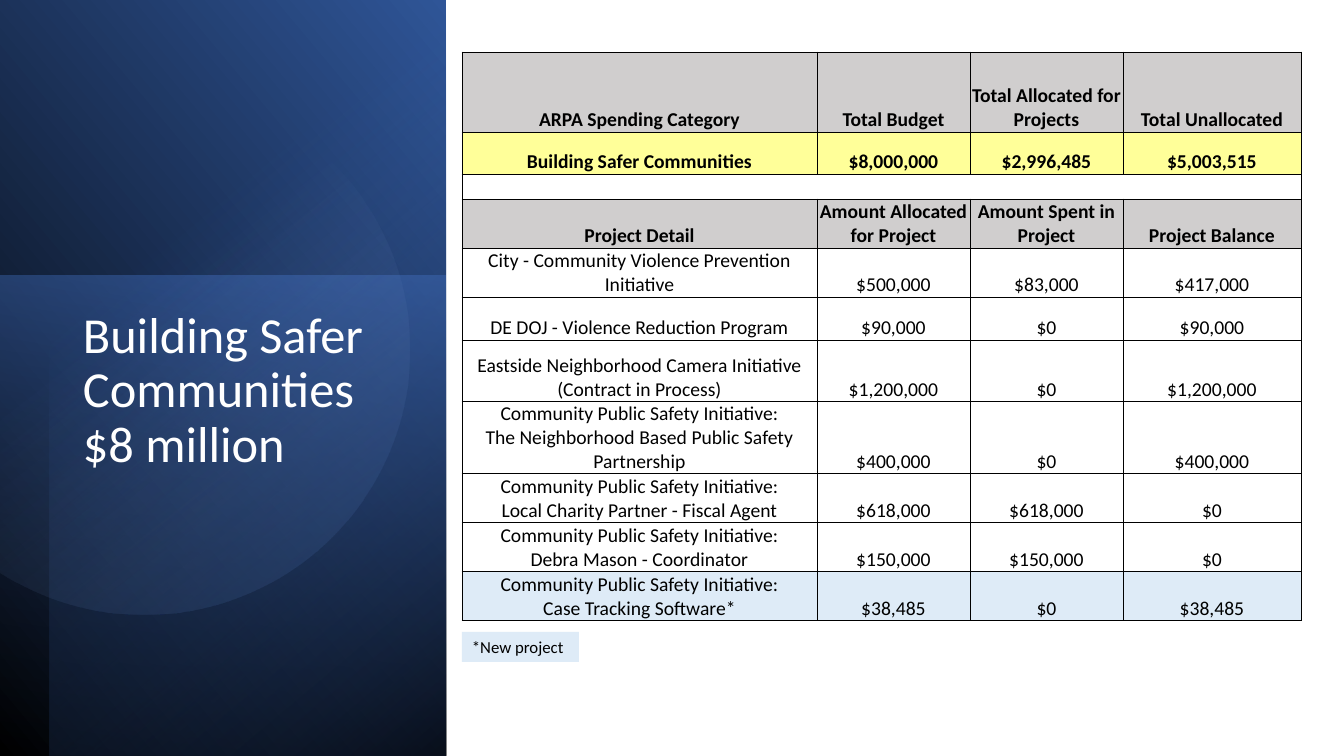
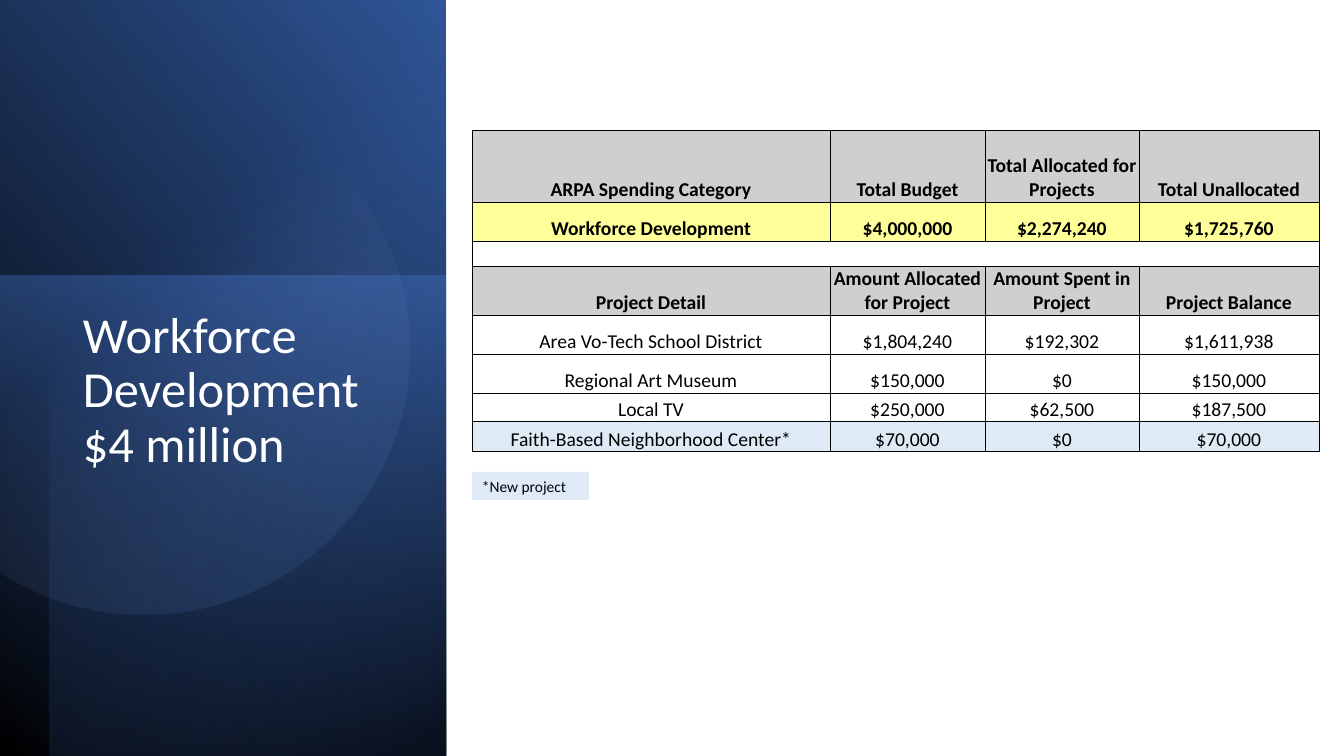
from dataclasses import dataclass
from math import acos, cos, sin

from lxml.etree import SubElement
from pptx import Presentation
from pptx.dml.color import RGBColor
from pptx.enum.shapes import MSO_SHAPE as Preset
from pptx.enum.text import MSO_ANCHOR as Anchor, PP_ALIGN as Align
from pptx.oxml import parse_xml
from pptx.oxml.ns import nsdecls, qn
from pptx.util import Emu, Pt

SLIDE_WIDTH, SLIDE_HEIGHT = 1344, 756
EMU_PER_PX = 12192000 / SLIDE_WIDTH


@dataclass(frozen=True)
class Theme:
    font: str = "Calibri"
    text: str = "000000"
    title: str = "FFFFFF"
    blank: str = "FFFFFF"
    header: str = "D0CECE"
    total: str = "FFFF99"
    new: str = "DEEBF7"
    black: str = "000000"
    blue: str = "4472C4"
    light_blue: str = "8FAADC"
    deep_blue: str = "2F5597"
    navy: str = "203864"
    title_size: int = 36
    table_size: int = 14
    border: float = 0.5


def px(length):
    return Emu(round(length * EMU_PER_PX))


class Deck:
    def __init__(self, theme):
        self.theme = theme
        self.presentation = Presentation()
        self.presentation.slide_width = px(SLIDE_WIDTH)
        self.presentation.slide_height = px(SLIDE_HEIGHT)
        self.slide = None

    def new_slide(self):
        self.slide = self.presentation.slides.add_slide(self.presentation.slide_layouts[6])

    def style_paragraph(self, paragraph, size, color, bold=False, align=Align.LEFT):
        paragraph.alignment = align
        for run in paragraph.runs:
            run.font.name = self.theme.font
            run.font.size = Pt(size)
            run.font.bold = bold
            run.font.color.rgb = RGBColor.from_string(color)

    def rectangle(self, left, top, width, height):
        shape = self.slide.shapes.add_shape(
            Preset.RECTANGLE, px(left), px(top), px(width), px(height))
        shape.shadow.inherit = False
        shape.line.fill.background()
        return shape

    def gradient(self, shape, stops, angle):
        """Fill with two (position, colour, opacity %) stops; angle runs clockwise."""
        shape.fill.gradient()
        shape.fill.gradient_angle = 360 - angle
        for stop, (position, color, _) in zip(shape.fill.gradient_stops, stops):
            stop.position = position
            stop.color.rgb = RGBColor.from_string(color)
        for element, (_, _, opacity) in zip(shape.element.iter(qn("a:gs")), stops):
            SubElement(element[0], qn("a:alpha"), val=str(opacity * 1000))

    def turned_panel(self, box, rotation, flip, stops, angle):
        """Cover box with a rectangle turned a quarter, so its sides are swapped first."""
        left, top, width, height = box
        shift = (width - height) / 2
        shape = self.rectangle(left + shift, top - shift, height, width)
        shape.rotation = rotation
        if flip:
            shape.element.spPr.find(qn("a:xfrm")).set("flipH", "1")
        self.gradient(shape, stops, angle)

    def cut_disc(self, center_x, center_y, radius, stops, angle, steps=120):
        """Draw a disc whose part beyond the slide's left edge is cut off."""
        limit = acos(-center_x / radius)
        turns = [limit * (2 * step / steps - 1) for step in range(steps + 1)]
        points = [(px(center_x + radius * cos(turn)), px(center_y + radius * sin(turn)))
                  for turn in turns]
        builder = self.slide.shapes.build_freeform(*points[0])
        builder.add_line_segments(points[1:], close=True)
        shape = builder.convert_to_shape()
        shape.shadow.inherit = False
        shape.line.fill.background()
        self.gradient(shape, stops, angle)

    def side_panel(self):
        theme = self.theme
        self.turned_panel((0, 0, 446, 756), 90, True,
                          [(0, theme.black, 100), (1, theme.deep_blue, 100)], 310)
        self.turned_panel((0, 275, 446, 481), 270, False,
                          [(0, theme.blue, 50), (1, theme.navy, 0)], 190)
        self.turned_panel((50, 0, 396, 756), 270, True,
                          [(0, theme.black, 59), (0.69, theme.blue, 0)], 220)
        self.cut_disc(144, 350, 265,
                      [(0.39, theme.light_blue, 0), (1, theme.deep_blue, 26)], 52)

    def title(self, text):
        box = self.slide.shapes.add_textbox(px(73), px(305), px(318), px(339))
        frame = box.text_frame
        frame.word_wrap = True
        frame.text = text
        paragraph = frame.paragraphs[0]
        paragraph.line_spacing = 0.9
        self.style_paragraph(paragraph, self.theme.title_size, self.theme.title)

    def border_cell(self, cell):
        properties = cell._tc.get_or_add_tcPr()
        for index, side in enumerate("LRTB"):
            properties.insert(index, parse_xml(
                f'<a:ln{side} {nsdecls("a")} w="{Pt(self.theme.border)}"><a:solidFill>'
                f'<a:srgbClr val="{self.theme.black}"/></a:solidFill></a:ln{side}>'))

    def cell(self, cell, text, fill, bold):
        cell.margin_left = cell.margin_right = cell.margin_top = cell.margin_bottom = 0
        cell.vertical_anchor = Anchor.BOTTOM
        cell.fill.solid()
        cell.fill.fore_color.rgb = RGBColor.from_string(fill)
        self.border_cell(cell)
        cell.text_frame.text = text
        for paragraph in cell.text_frame.paragraphs:
            self.style_paragraph(paragraph, self.theme.table_size, self.theme.text,
                                 bold, Align.CENTER)
            if not text:
                SubElement(paragraph._p, qn("a:endParaRPr"),
                           sz=str(self.theme.table_size * 100))

    def budget_table(self, left, top, columns, heights, total, projects):
        """Summary rows, a merged gap and project rows; the last project is new."""
        theme = self.theme
        rows = [
            (("ARPA Spending Category", "Total Budget", "Total Allocated for Projects",
              "Total Unallocated"), theme.header, True),
            (total, theme.total, True),
            (("",) * 4, theme.blank, False),
            (("Project Detail", "Amount Allocated for Project", "Amount Spent in Project",
              "Project Balance"), theme.header, True),
            *((project, theme.blank, False) for project in projects[:-1]),
            (projects[-1], theme.new, False),
        ]
        table = self.slide.shapes.add_table(
            len(rows), len(columns), px(left), px(top),
            px(sum(columns)), px(sum(heights))).table
        table.first_row = table.horz_banding = False
        for column, width in zip(table.columns, columns):
            column.width = px(width)
        for row, height, (texts, fill, bold) in zip(table.rows, heights, rows):
            row.height = px(height)
            for cell, text in zip(row.cells, texts):
                self.cell(cell, text, fill, bold)
        table.cell(2, 0).merge(table.cell(2, len(columns) - 1))

    def new_project_key(self, left, top, height, size):
        shape = self.rectangle(left, top, 117, height)
        shape.fill.solid()
        shape.fill.fore_color.rgb = RGBColor.from_string(self.theme.new)
        frame = shape.text_frame
        frame.word_wrap = True
        frame.vertical_anchor = Anchor.MIDDLE
        frame.text = "*New project"
        self.style_paragraph(frame.paragraphs[0], size, self.theme.text)


def safer_communities(deck):
    initiative = "Community Public Safety Initiative:\n"
    deck.new_slide()
    deck.side_panel()
    deck.title("Building Safer Communities\v$8 million")
    deck.budget_table(
        462, 52, (355, 153, 153, 178), (80, 42, 25, 49, 49, 43, 62, 72, 49, 49, 49),
        ("Building Safer Communities", "$8,000,000", "$2,996,485", "$5,003,515"),
        [
            ("City - Community Violence Prevention Initiative",
             "$500,000", "$83,000", "$417,000"),
            ("DE DOJ - Violence Reduction Program", "$90,000", "$0", "$90,000"),
            ("Eastside Neighborhood Camera Initiative (Contract in Process)",
             "$1,200,000", "$0", "$1,200,000"),
            (initiative + "The Neighborhood Based Public Safety Partnership",
             "$400,000", "$0", "$400,000"),
            (initiative + "Local Charity Partner - Fiscal Agent",
             "$618,000", "$618,000", "$0"),
            (initiative + "Debra Mason - Coordinator", "$150,000", "$150,000", "$0"),
            (initiative + "Case Tracking Software*", "$38,485", "$0", "$38,485"),
        ])
    deck.new_project_key(462, 632, 30, 12)


def workforce_development(deck):
    deck.new_slide()
    deck.side_panel()
    deck.title("Workforce Development\v$4 million")
    deck.budget_table(
        472, 130, (358, 155, 154, 180), (72, 39, 25, 49, 39, 39, 29, 30),
        ("Workforce Development", "$4,000,000", "$2,274,240", "$1,725,760"),
        [
            ("Area Vo-Tech School District", "$1,804,240", "$192,302", "$1,611,938"),
            ("Regional Art Museum", "$150,000", "$0", "$150,000"),
            ("Local TV", "$250,000", "$62,500", "$187,500"),
            ("Faith-Based Neighborhood Center*", "$70,000", "$0", "$70,000"),
        ])
    deck.new_project_key(472, 472, 28, 11)


def main():
    deck = Deck(Theme())
    safer_communities(deck)
    workforce_development(deck)
    deck.presentation.save("out.pptx")


if __name__ == "__main__":
    main()
